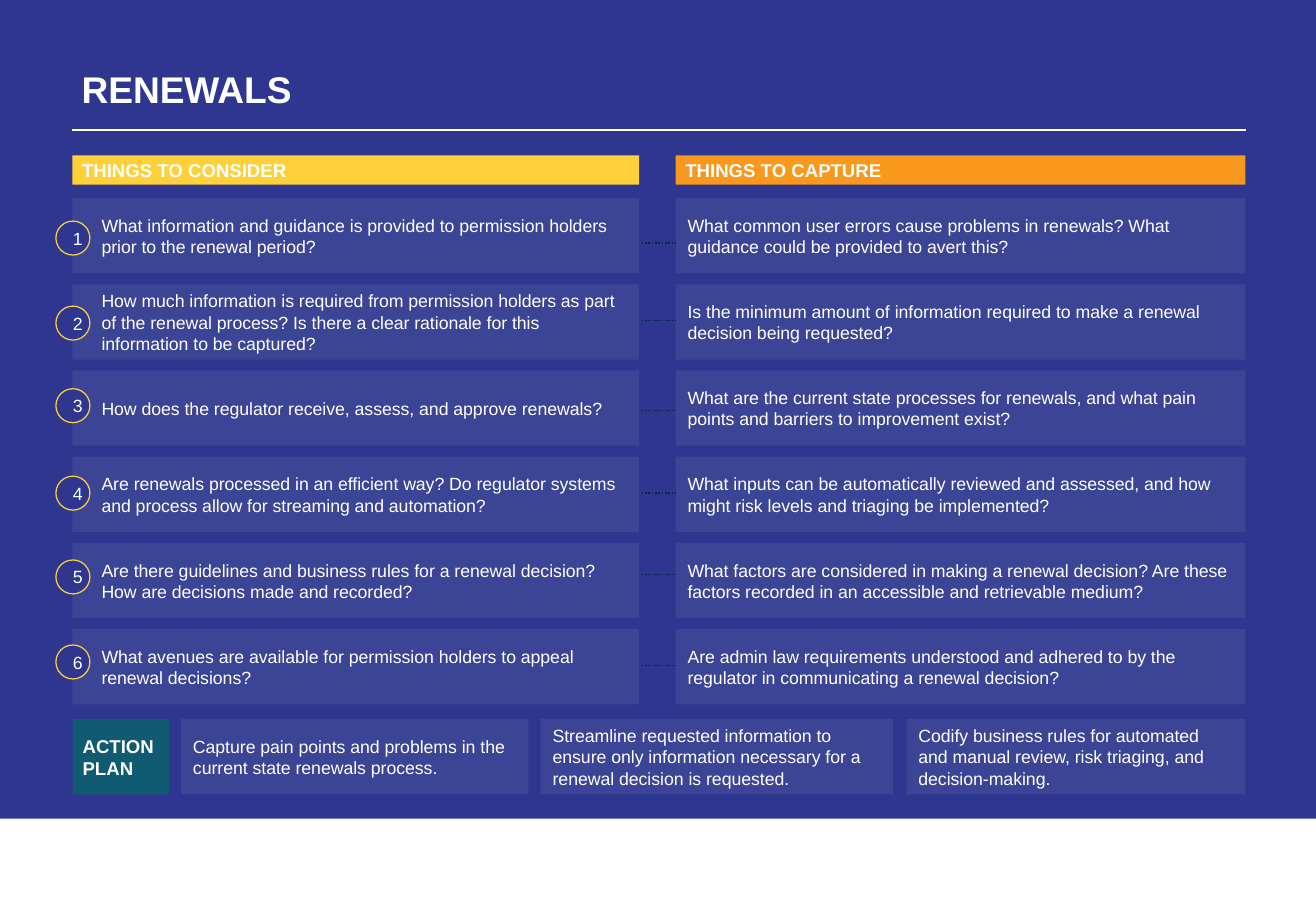
from lxml import etree
from pptx import Presentation
from pptx import util as u
from pptx.dml.color import RGBColor
from pptx.enum import dml, shapes, text
from pptx.oxml.ns import qn

COLOURS = {
    "navy": "2E368F",
    "white": "FFFFFF",
    "yellow": "FED13B",
    "orange": "F8981D",
    "teal": "105B72",
    "dots": "00264D",
}
FONT = "Arial"
PANEL_ALPHA = 7
BODY_SIZE, HEADING_SIZE, TITLE_SIZE = 10.5, 11, 22
ROW_HEIGHT, ROW_PITCH = 44.64, 51.12
BADGE = 20.16

CONSIDER = [
    "What information and guidance is provided to permission holders prior to the renewal period?",
    "How much information is required from permission holders as part of the renewal process? "
    "Is there a clear rationale for this information to be captured?",
    "How does the regulator receive, assess, and approve renewals?",
    "Are renewals processed in an efficient way? Do regulator systems and process allow for "
    "streaming and automation?",
    "Are there guidelines and business rules for a renewal decision? How are decisions made and recorded?",
    "What avenues are available for permission holders to appeal renewal decisions?",
]
CAPTURE = [
    "What common user errors cause problems in renewals? What guidance could be provided to avert this?",
    "Is the minimum amount of information required to make a renewal decision being requested?",
    "What are the current state processes for renewals, and what pain points and barriers to improvement exist?",
    "What inputs can be automatically reviewed and assessed, and how might risk levels and triaging be implemented?",
    "What factors are considered in making a renewal decision? Are these factors recorded in an "
    "accessible and retrievable medium?",
    "Are admin law requirements understood and adhered to by the regulator in communicating a renewal decision?",
]
ACTIONS = [
    (107.28, 205.92, "Capture pain points and problems in the current state renewals process."),
    (320.4, 208.8, "Streamline requested information to ensure only information necessary for a "
                   "renewal decision is requested."),
    (537.12, 200.88, "Codify business rules for automated and manual review, risk triaging, and decision-making."),
]
BADGE_TOPS = [131.04, 181.44, 230.4, 282.24, 331.92, 382.32]
LINK_HEIGHTS = [144, 190.08, 243.36, 292.32, 340.56, 394.56]


def colour(name):
    return RGBColor.from_string(COLOURS[name])


def write(shape, words, size, bold=False, insets=(7.2, 7.2),
          align=text.PP_ALIGN.LEFT, anchor=text.MSO_ANCHOR.MIDDLE):
    frame = shape.text_frame
    frame.word_wrap = True
    frame.vertical_anchor = anchor
    frame.margin_left, frame.margin_right = (u.Pt(inset) for inset in insets)
    frame.margin_top = frame.margin_bottom = u.Pt(3.6)
    paragraph = frame.paragraphs[0]
    paragraph.text = words
    paragraph.alignment = align
    paragraph.font.name = FONT
    paragraph.font.size = u.Pt(size)
    paragraph.font.bold = bold
    paragraph.font.color.rgb = colour("white")
    return paragraph


def add_block(slide, box, fill, kind=shapes.MSO_SHAPE.RECTANGLE, outline=None):
    shape = slide.shapes.add_shape(kind, *map(u.Pt, box))
    shape.shadow.inherit = False
    shape.fill.solid()
    shape.fill.fore_color.rgb = colour(fill)
    if outline:
        shape.line.color.rgb = colour(outline)
        shape.line.width = u.Pt(0.75)
    else:
        shape.line.fill.background()
    return shape


def add_panel(slide, box, words, left_inset=7.2):
    panel = add_block(slide, box, "white")
    tint = panel.fill._xPr.find(".//" + qn("a:srgbClr"))
    etree.SubElement(tint, qn("a:alpha"), val=str(PANEL_ALPHA * 1000))
    write(panel, words, BODY_SIZE, insets=(left_inset, 7.2))


def add_rule(slide, left, right, height, name, width, dash=None):
    rule = slide.shapes.add_connector(
        shapes.MSO_CONNECTOR.STRAIGHT, *map(u.Pt, (left, height, right, height)))
    rule.line.color.rgb = colour(name)
    rule.line.width = u.Pt(width)
    if dash:
        rule.line.dash_style = dash
    etree.SubElement(rule._element.spPr, qn("a:effectLst"))


def add_title(slide, left, top, width):
    title = slide.shapes.add_textbox(*map(u.Pt, (left + 5.76, top, width - 12.24, 30.96)))
    paragraph = write(title, "RENEWALS", TITLE_SIZE, True, (0, 0), anchor=text.MSO_ANCHOR.BOTTOM)
    paragraph.line_spacing = 0.9
    add_rule(slide, left, left + width, top + 38.16, "white", 1.25)


def add_column(slide, left, top, width, heading, fill, questions, left_inset=7.2):
    header = add_block(slide, (left, top, width, 17.28), fill)
    write(header, heading, HEADING_SIZE, True, (5.76, 5.76))
    for row, question in enumerate(questions):
        row_top = top + 25.2 + row * ROW_PITCH
        add_panel(slide, (left, row_top, width, ROW_HEIGHT), question, left_inset)


def add_action_plan(slide, left, top):
    label = add_block(slide, (left, top, 56.88, ROW_HEIGHT), "teal")
    write(label, "ACTION PLAN", HEADING_SIZE, True, (5.76, 5.76))
    for action_left, width, action in ACTIONS:
        add_panel(slide, (action_left, top, width, ROW_HEIGHT), action)


def add_badges(slide, left):
    for number, top in enumerate(BADGE_TOPS, 1):
        badge = add_block(slide, (left, top, BADGE, BADGE), "navy",
                          shapes.MSO_SHAPE.OVAL, "yellow")
        write(badge, str(number), BODY_SIZE, align=text.PP_ALIGN.CENTER)


def add_links(slide, left, right):
    for height in LINK_HEIGHTS:
        add_rule(slide, left, right, height, "dots", 1, dml.MSO_LINE.ROUND_DOT)


def build():
    presentation = Presentation()
    presentation.slide_width, presentation.slide_height = u.Pt(779.76), u.Pt(540)
    slide = presentation.slides.add_slide(presentation.slide_layouts[6])
    add_block(slide, (0, 0, 779.76, 485.28), "navy")
    add_title(slide, 42.6, 38.88, 695.4)
    add_column(slide, 42.9, 92.16, 335.9, "THINGS TO CONSIDER", "yellow", CONSIDER, 17.28)
    add_column(slide, 400.32, 92.16, 337.68, "THINGS TO CAPTURE", "orange", CAPTURE)
    add_action_plan(slide, 43.2, 426.24)
    add_badges(slide, 33.12)
    add_links(slide, 380.16, 400.32)
    presentation.save("out.pptx")


if __name__ == "__main__":
    build()
